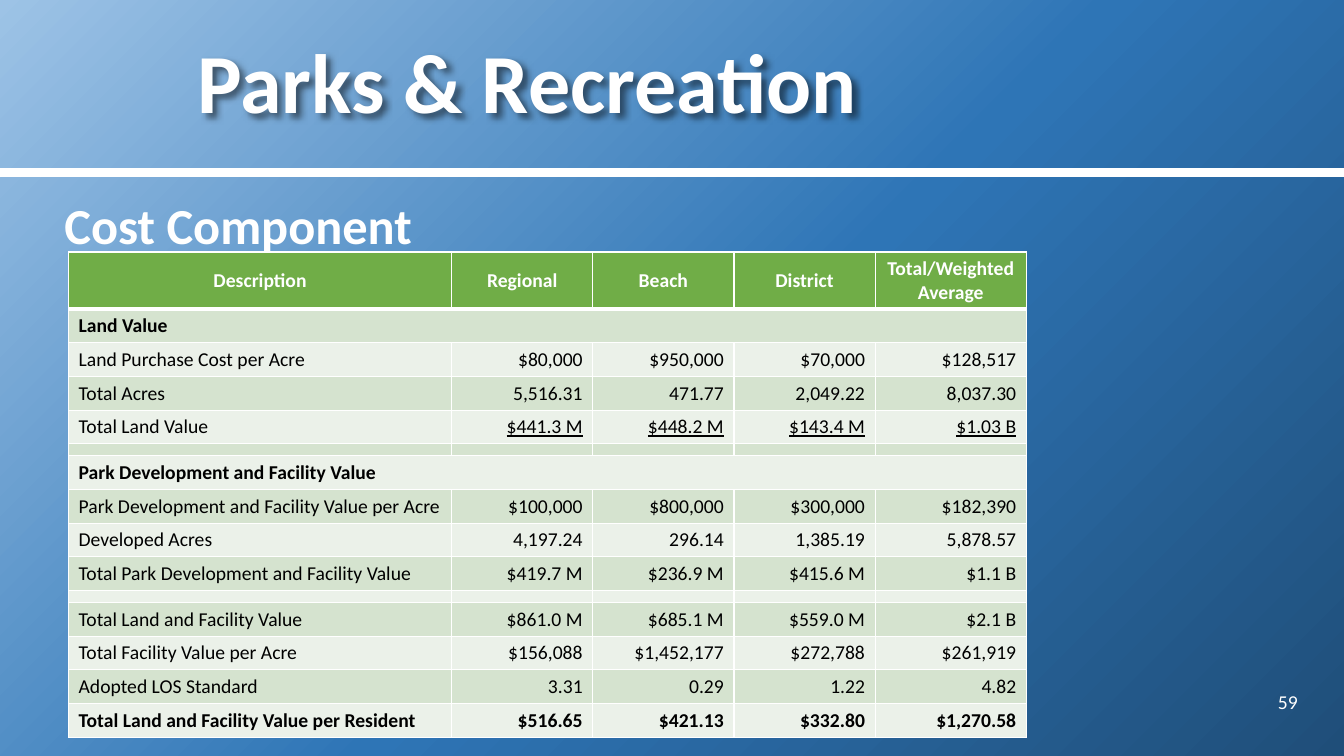
from dataclasses import dataclass

from lxml import etree
from pptx import Presentation, util as u
from pptx.dml.color import RGBColor
from pptx.enum import shapes, text
from pptx.oxml import ns

# Content: (kind, cells), where the kind sets the look of the row
TITLE = "Parks & Recreation"
HEADING = "Cost Component"
PAGE = "59"
ROWS = [
    ("header", ["Description", "Regional", "Beach", "District", "Total/Weighted Average"]),
    ("section", ["Land Value"]),
    ("plain", ["Land Purchase Cost per Acre", "$80,000", "$950,000", "$70,000", "$128,517"]),
    ("plain", ["Total Acres", "5,516.31", "471.77", "2,049.22", "8,037.30"]),
    ("sum", ["Total Land Value", "$441.3 M", "$448.2 M", "$143.4 M", "$1.03 B"]),
    ("gap", []),
    ("section", ["Park Development and Facility Value"]),
    ("plain", ["Park Development and Facility Value per Acre",
               "$100,000", "$800,000", "$300,000", "$182,390"]),
    ("plain", ["Developed Acres", "4,197.24", "296.14", "1,385.19", "5,878.57"]),
    ("plain", ["Total Park Development and Facility Value",
               "$419.7 M", "$236.9 M", "$415.6 M", "$1.1 B"]),
    ("gap", []),
    ("plain", ["Total Land and Facility Value", "$861.0 M", "$685.1 M", "$559.0 M", "$2.1 B"]),
    ("plain", ["Total Facility Value per Acre", "$156,088", "$1,452,177", "$272,788", "$261,919"]),
    ("plain", ["Adopted LOS Standard", "3.31", "0.29", "1.22", "4.82"]),
    ("total", ["Total Land and Facility Value per Resident",
               "$516.65", "$421.13", "$332.80", "$1,270.58"]),
]
COLUMNS = [3.8, 1.4, 1.4, 1.4, 1.5]
HEIGHTS = {"header": 0.56, "gap": 0.12}
ROW_HEIGHT = 0.33


@dataclass(frozen=True)
class Theme:
    font: str = "Calibri"
    white: str = "FFFFFF"
    black: str = "000000"
    header: str = "70AD47"
    bands: tuple = ("EBF1E9", "D5E3CF")
    backdrop: tuple = ((0, "9DC3E6"), (53, "2E75B6"), (100, "1F4E79"))
    title: int = 60
    heading: int = 36
    body: int = 14
    gap: int = 1


T = Theme()
WIDTH, HEIGHT = 13.33, 7.5
BAND = 1.71     # height of the title band
RIGHT = 12.96   # right edge shared by the text boxes


def sub(parent, tag, **attrs):
    return etree.SubElement(parent, ns.qn(tag), {k: str(v) for k, v in attrs.items()})


def style(p, size, color, bold=False, align=None):
    p.alignment = align
    f = p.font
    f.name, f.size, f.bold = T.font, u.Pt(size), bold
    f.color.rgb = RGBColor.from_string(color)


def add_text(s, words, left, top, height, size, bold=True, align=None,
             anchor=text.MSO_ANCHOR.MIDDLE, spacing=0.9, width=None):
    sp = s.shapes.add_textbox(u.Inches(left), u.Inches(top),
                              u.Inches(width or RIGHT - left), u.Inches(height))
    tf = sp.text_frame
    tf.word_wrap, tf.vertical_anchor = True, anchor
    p = tf.paragraphs[0]
    p.text, p.line_spacing = words, spacing
    style(p, size, T.white, bold, align)
    return sp


def paint_background(s):
    s.background.fill.gradient()
    grad = s.element.find(".//" + ns.qn("a:gradFill"))
    for child in list(grad):
        grad.remove(child)
    stops = sub(grad, "a:gsLst")
    for share, color in T.backdrop:
        sub(sub(stops, "a:gs", pos=share * 1000), "a:srgbClr", val=color)
    sub(sub(grad, "a:path", path="circle"), "a:fillToRect", r=100000, b=100000)


def add_shadow(sp):
    shadow = sub(sub(sp.element.spPr, "a:effectLst"), "a:outerShdw",
                 blurRad=u.Pt(4), dist=u.Pt(4), dir=2700000, algn="tl", rotWithShape=0)
    sub(sub(shadow, "a:srgbClr", val=T.black), "a:alpha", val=50000)


def add_borders(cell, top, bottom):
    tcPr = cell._tc.get_or_add_tcPr()
    for i, (side, width) in enumerate((("L", 1), ("R", 1), ("T", top), ("B", bottom))):
        ln = sub(tcPr, "a:ln" + side, w=u.Pt(width))
        sub(sub(ln, "a:solidFill"), "a:srgbClr", val=T.white)
        tcPr.insert(i, ln)


def fill_cell(cell, kind, words, row, col):
    header = kind == "header"
    cell.fill.solid()
    cell.fill.fore_color.rgb = RGBColor.from_string(T.header if header else T.bands[row % 2])
    add_borders(cell, 3 if row == 1 else 1, 3 if header else 1)
    if header:
        cell.vertical_anchor = text.MSO_ANCHOR.MIDDLE
    p = cell.text_frame.paragraphs[0]
    if words:
        p.text = words
    align = text.PP_ALIGN.CENTER if header else text.PP_ALIGN.RIGHT if col else None
    style(p, T.gap if kind == "gap" else T.body, T.white if header else T.black,
          kind in ("header", "section", "total"), align)
    if kind == "sum" and col:
        p.font.underline = True
    if kind == "gap":
        sub(p._p, "a:endParaRPr", sz=T.gap * 100)


def add_cost_table(s):
    heights = [HEIGHTS.get(kind, ROW_HEIGHT) for kind, _ in ROWS]
    table = s.shapes.add_table(len(ROWS), len(COLUMNS), u.Inches(0.68), u.Inches(2.5),
                               u.Inches(sum(COLUMNS)), u.Inches(sum(heights))).table
    for column, width in zip(table.columns, COLUMNS):
        column.width = u.Inches(width)
    last = len(COLUMNS) - 1
    for r, (kind, cells) in enumerate(ROWS):
        table.rows[r].height = u.Inches(heights[r])
        if kind == "section":
            table.cell(r, 0).merge(table.cell(r, last))
        for c in range(last + 1):
            fill_cell(table.cell(r, c), kind, cells[c] if c < len(cells) else "", r, c)


def main():
    prs = Presentation()
    prs.slide_width, prs.slide_height = u.Inches(WIDTH), u.Inches(HEIGHT)
    s = prs.slides.add_slide(prs.slide_layouts[6])
    paint_background(s)

    # Rule under the title band
    rule = s.shapes.add_connector(shapes.MSO_CONNECTOR.STRAIGHT, 0, u.Inches(BAND),
                                  prs.slide_width, u.Inches(BAND))
    rule.line.color.rgb = RGBColor.from_string(T.white)
    rule.line.width = u.Pt(6)
    sub(rule.element.spPr, "a:effectLst")

    # Page number, heading, table and title
    add_text(s, PAGE, 12.08, 6.76, 0.4, T.body, bold=False,
             align=text.PP_ALIGN.RIGHT, spacing=1.0, width=0.89)
    add_text(s, HEADING, 0.54, 1.94, 5.27, T.heading, anchor=text.MSO_ANCHOR.TOP)
    add_cost_table(s)
    add_shadow(add_text(s, TITLE, 1.86, 0, BAND, T.title))

    prs.save("out.pptx")


if __name__ == "__main__":
    main()
